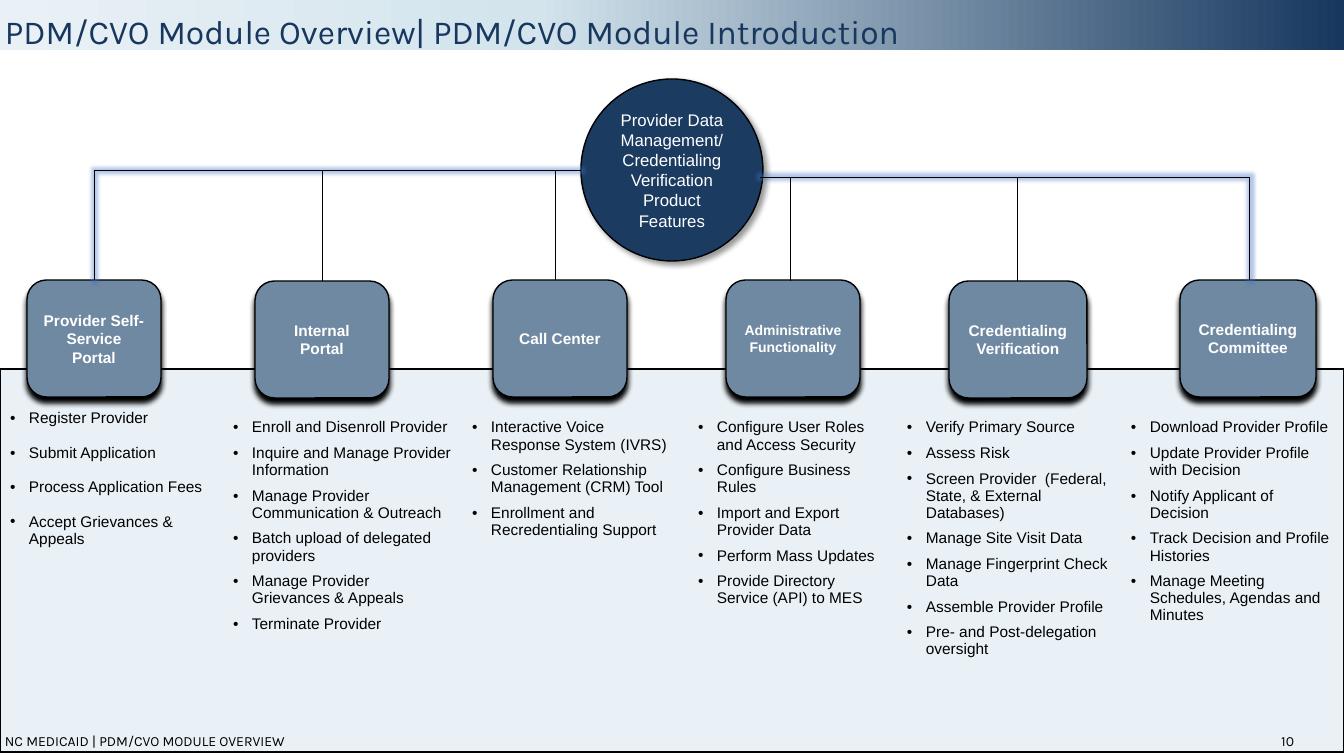
"""Build the module overview slide: a feature hub, six feature boxes and their bullet lists."""
from copy import deepcopy

from lxml import etree
from pptx import Presentation
from pptx.dml.color import RGBColor
from pptx.enum.shapes import MSO_CONNECTOR as LINE, MSO_SHAPE as SHAPE
from pptx.enum.text import MSO_ANCHOR as ANCHOR, PP_ALIGN as ALIGN
from pptx.oxml import parse_xml
from pptx.oxml.ns import nsdecls, qn
from pptx.util import Emu, Pt

PX = 914400 / 100.8
COLORS = {
    "navy": RGBColor.from_string("17375E"),
    "hub": RGBColor.from_string("1B3B61"),
    "box": RGBColor.from_string("7089A2"),
    "sky": RGBColor.from_string("D3E4ED"),
    "pale": RGBColor.from_string("E9F1F6"),
    "black": RGBColor.from_string("000000"),
    "white": RGBColor.from_string("FFFFFF"),
}
SHADOW = ('<a:outerShdw blurRad="50800" dist="{}" dir="{}" algn="ctr" rotWithShape="0">'
          '<a:srgbClr val="000000"><a:alpha val="{}"/></a:srgbClr></a:outerShdw>')
GLOW = '<a:glow rad="63500"><a:srgbClr val="4472C4"><a:alpha val="40000"/></a:srgbClr></a:glow>'


def set_effect(shape, effect=""):
    xml = f'<a:effectLst {nsdecls("a")}>{effect}</a:effectLst>'
    shape._element.spPr.append(parse_xml(xml))


def write(p, text, size, color, font="Arial", bold=False, align=ALIGN.LEFT):
    p.text = text
    p.alignment = align
    for r in p.runs:
        r.font.size, r.font.name, r.font.bold = Pt(size), font, bold
        r.font.color.rgb = COLORS[color]


prs = Presentation()
prs.slide_width, prs.slide_height = Emu(round(1344 * PX)), Emu(round(756 * PX))
s = prs.slides.add_slide(prs.slide_layouts[6])

header = s.shapes.add_shape(SHAPE.RECTANGLE, 0, 0, prs.slide_width, round(50 * PX))
header.fill.gradient()
stop_list = next(header._element.iter(qn("a:gsLst")))
stop_list.insert(1, deepcopy(stop_list[0]))
header.fill.gradient_angle = 180
stops = [(0, "navy"), (0.6, "sky"), (1, "pale")]
for stop, (position, color) in zip(header.fill.gradient_stops, stops):
    stop.position = position
    stop.color.rgb = COLORS[color]
header.line.fill.background()
set_effect(header)

HUB = "Provider Data Management/ Credentialing Verification Product Features"
BOX_SHADOW = SHADOW.format(50800, 5400000, 100000)
shapes = [
    (SHAPE.RECTANGLE, 0, 369, 1344, 383, "pale", "", 11, ""),
    (SHAPE.FLOWCHART_CONNECTOR, 581, 79, 182, 182, "hub", HUB, 12,
     SHADOW.format(38100, 2700000, 40000)),
]
boxes = [
    ("Provider Self-Service Portal", 27, 280, 134, 11),
    ("Internal Portal", 255, 281, 134, 11),
    ("Call Center", 493, 280, 134, 11),
    ("Administrative Functionality", 726, 280, 134, 10),
    ("Credentialing Verification", 949, 281, 138, 11),
    ("Credentialing Committee", 1180, 280, 136, 11),
]
for text, x, y, w, size in boxes:
    shapes.append((SHAPE.ROUNDED_RECTANGLE, x, y, w, 117, "box", text, size, BOX_SHADOW))

drawn = {}
for kind, x, y, w, h, fill, text, size, effect in shapes:
    sp = s.shapes.add_shape(kind, *(round(v * PX) for v in (x, y, w, h)))
    sp.fill.solid()
    sp.fill.fore_color.rgb = COLORS[fill]
    sp.line.color.rgb = COLORS["black"]
    sp.line.width = Pt(1)
    set_effect(sp, effect)
    if text:
        tf = sp.text_frame
        tf.word_wrap, tf.vertical_anchor = True, ANCHOR.MIDDLE
        write(tf.paragraphs[0], text, size, "white", bold=text != HUB, align=ALIGN.CENTER)
        drawn[text] = sp

connectors = [
    (LINE.ELBOW, 581, 170, 94, 280, None),
    (LINE.ELBOW, 760, 177, 1249, 280, None),
    (LINE.STRAIGHT, 322, 170, 322, 281, "Internal Portal"),
    (LINE.STRAIGHT, 555, 170, 555, 280, None),
    (LINE.STRAIGHT, 790, 177, 790, 281, None),
    (LINE.STRAIGHT, 1017, 177, 1017, 281, None),
]
for kind, x1, y1, x2, y2, target in connectors:
    cxn = s.shapes.add_connector(kind, *(round(v * PX) for v in (x1, y1, x2, y2)))
    cxn.line.color.rgb = COLORS["black"]
    cxn.line.width = Pt(0.5)
    if target:
        cxn.end_connect(drawn[target], 0)
    if kind == LINE.ELBOW:
        cxn._element.spPr.find(qn("a:prstGeom")).set("prst", "bentConnector2")
    set_effect(cxn, GLOW if kind == LINE.ELBOW else "")

columns = [
    (223, 22, 12.3, ["Register Provider", "Submit Application", "Process Application Fees",
                     "Accept Grievances & Appeals"]),
    (239, 31, 6, ["Enroll and Disenroll Provider ", "Inquire and Manage Provider Information",
                  "Manage Provider Communication & Outreach",
                  "Batch upload of delegated providers",
                  "Manage Provider Grievances & Appeals", "Terminate Provider"]),
    (226, 31, 6, ["Interactive Voice Response System (IVRS)",
                  "Customer Relationship Management (CRM) Tool",
                  "Enrollment and Recredentialing Support"]),
    (209, 31, 6, ["Configure User Roles and Access Security", "Configure Business Rules",
                  "Import and Export  Provider Data", "Perform Mass Updates",
                  "Provide Directory Service (API) to MES"]),
    (224, 31, 6, ["Verify Primary Source", "Assess Risk",
                  "Screen Provider  (Federal, State, & External Databases)",
                  "Manage Site Visit Data", "Manage Fingerprint Check Data",
                  "Assemble Provider Profile", "Pre- and Post-delegation oversight"]),
    (223, 31, 6, ["Download Provider Profile", "Update Provider Profile with Decision",
                  "Notify Applicant of Decision", "Track Decision and Profile Histories",
                  "Manage Meeting Schedules, Agendas and Minutes"]),
]
frame = s.shapes.add_table(1, len(columns), 0, round(388 * PX), prs.slide_width, round(365 * PX))
table = frame.table
table.first_row = table.horz_banding = False
next(frame._element.iter(qn("a:tableStyleId"))).text = "{2D5ABB26-0587-4C30-8999-92F81FD0307C}"
for i, (width, top, gap, features) in enumerate(columns):
    table.columns[i].width = round(width * PX)
    cell = table.cell(0, i)
    cell.fill.background()
    cell.margin_top = round(top * PX)
    tf = cell.text_frame
    for j, feature in enumerate(features):
        p = tf.add_paragraph() if j else tf.paragraphs[0]
        write(p, feature, 11, "black")
        p.space_after = Pt(gap)
        pPr = p._p.get_or_add_pPr()
        pPr.set("marL", "171450")
        pPr.set("indent", "-171450")
        etree.SubElement(pPr, qn("a:buFont")).set("typeface", "Arial")
        etree.SubElement(pPr, qn("a:buChar")).set("char", "•")

labels = [
    ("PDM/CVO Module Overview| PDM/CVO Module Introduction", -5, 6, 1308, 50, 24, "navy",
     ANCHOR.TOP, ALIGN.LEFT),
    ("NC MEDICAID | PDM/CVO MODULE OVERVIEW", -5, 726, 320, 30, 10, "black",
     ANCHOR.MIDDLE, ALIGN.LEFT),
    ("10", 1221, 725, 83, 31, 10, "black", ANCHOR.MIDDLE, ALIGN.RIGHT),
]
for text, x, y, w, h, size, color, anchor, align in labels:
    tb = s.shapes.add_textbox(*(round(v * PX) for v in (x, y, w, h)))
    tf = tb.text_frame
    tf.word_wrap, tf.vertical_anchor = True, anchor
    write(tf.paragraphs[0], text, size, color, font="Karla", align=align)

prs.save("out.pptx")
